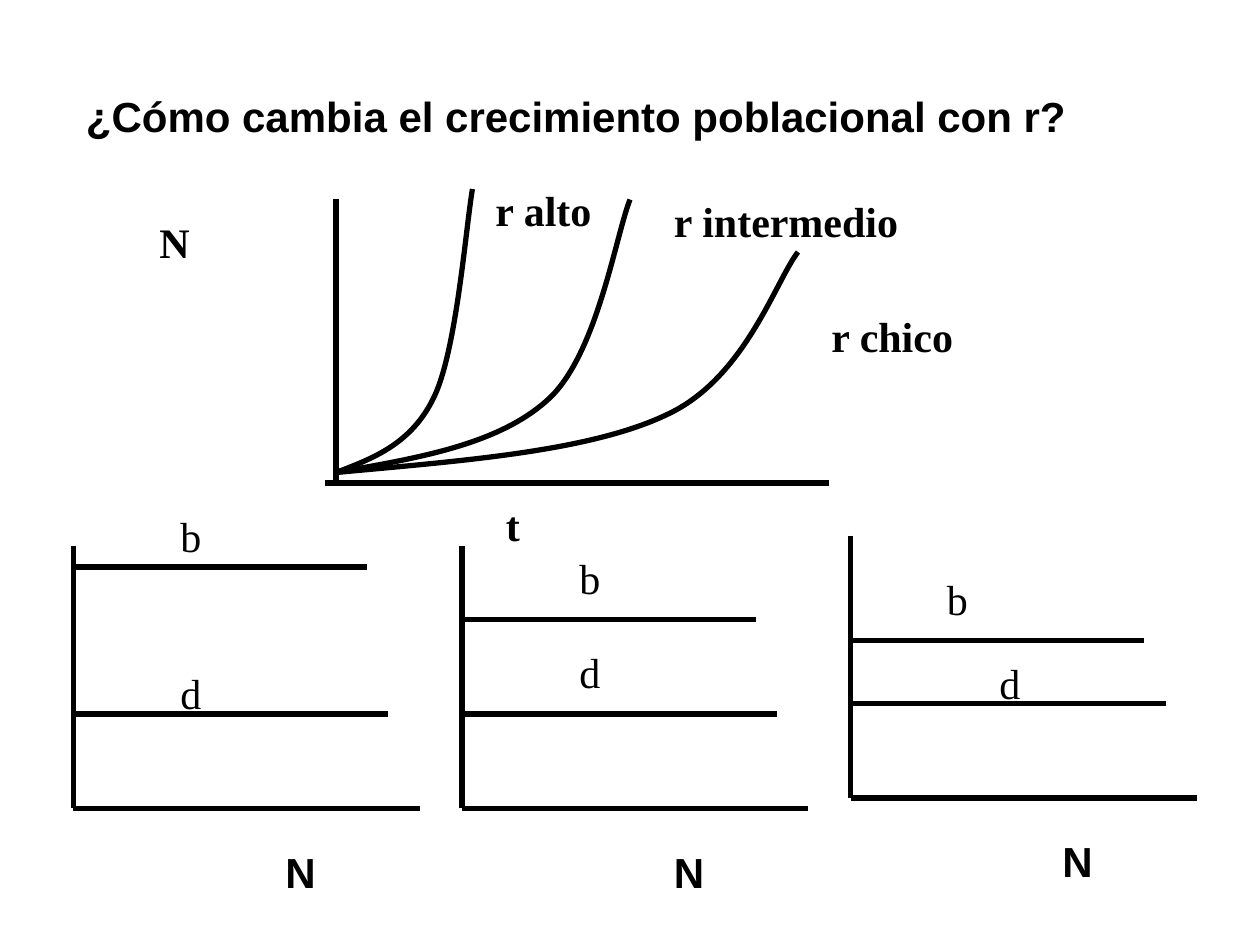
"""Build a slide on how population growth changes with r."""
from lxml.etree import SubElement
from pptx import Presentation
from pptx.dml.color import RGBColor
from pptx.enum.shapes import MSO_CONNECTOR as CONN
from pptx.enum.text import MSO_AUTO_SIZE as AUTO
from pptx.oxml.ns import qn
from pptx.util import Pt

PX = 9525
BLACK, WHITE = "000000", "FFFFFF"
SERIF, SANS = "Times New Roman", "Arial"
ORIGIN = (256, 360)
CURVES = [
    [(318, 349), (380, 339), (418, 304), (455, 270), (469, 180), (480, 152)],
    [(285, 349), (314, 338), (331, 302), (348, 266), (355, 173), (360, 144)],
    [(353, 351), (451, 344), (510, 315), (568, 287), (591, 214), (608, 192)],
]
CURVE_LABELS = [
    ("t", 376, 376, 88),
    ("r chico", 624, 232, 120),
    ("r intermedio", 504, 144, 224),
    ("r alto", 368, 136, 120),
    ("N", 112, 160, 112),
]
PANELS = [
    (56, 416, 432, (128, 384), (128, 504)),
    (352, 416, 472, (432, 416), (432, 488)),
    (648, 408, 488, (712, 432), (752, 496)),
]


def color(value):
    return RGBColor.from_string(value)


def add_line(shapes, x1, y1, x2, y2):
    line = shapes.add_connector(CONN.STRAIGHT, *(v * PX for v in (x1, y1, x2, y2)))
    line.line.color.rgb = color(BLACK)
    line.line.width = Pt(3)
    SubElement(line._element.spPr, qn("a:effectLst"))


def add_text(shapes, text, x, y, w, font=SERIF, bold=True, fill=None):
    box = shapes.add_textbox(x * PX, y * PX, w * PX, 48 * PX)
    if fill:
        box.fill.solid()
        box.fill.fore_color.rgb = color(fill)
    tf = box.text_frame
    tf.word_wrap = True
    tf.auto_size = AUTO.SHAPE_TO_FIT_TEXT
    p = tf.paragraphs[0]
    p.text = text
    p.font.name, p.font.size, p.font.bold = font, Pt(24), bold
    p.font.color.rgb = color(BLACK)


def add_curve(shapes, start, points):
    builder = shapes.build_freeform(*start, scale=PX)
    builder.add_line_segments(points[2::3], close=False)
    sp = builder.convert_to_shape()
    sp.shadow.inherit = False
    sp.fill.background()
    sp.line.color.rgb = color(BLACK)
    sp.line.width = Pt(3)
    left, top = start[0], points[-1][1]
    segments = list(sp._element.iter(qn("a:lnTo")))
    for i, segment in enumerate(segments):
        segment.tag = qn("a:cubicBezTo")
        segment.remove(segment[0])
        for x, y in points[3 * i:3 * i + 3]:
            SubElement(segment, qn("a:pt"), x=str(x - left), y=str(y - top))


def add_panel(shapes, x, top, b_y):
    base = top + 200
    add_line(shapes, x, top, x, base)
    for y, length in ((base, 264), (base - 72, 240), (b_y, 224)):
        add_line(shapes, x, y, x + length, y)
    add_text(shapes, "N", x + 152, base + 24, 64, SANS)


def main():
    prs = Presentation()
    prs.slide_width, prs.slide_height = 960 * PX, 720 * PX
    s = prs.slides.add_slide(prs.slide_layouts[6])
    shapes = s.shapes
    add_text(shapes, "¿Cómo cambia el crecimiento poblacional con r?",
             56, 64, 792, SANS, fill=WHITE)
    add_line(shapes, 256, 152, 256, 368)
    add_line(shapes, 248, 368, 632, 368)
    for points in CURVES:
        add_curve(shapes, ORIGIN, points)
    for label in CURVE_LABELS:
        add_text(shapes, *label)
    for x, top, b_y, b_at, d_at in PANELS:
        add_panel(shapes.add_group_shape().shapes, x, top, b_y)
        add_text(shapes, "b", *b_at, 56, bold=False)
        add_text(shapes, "d", *d_at, 56, bold=False)
    prs.save("out.pptx")


if __name__ == "__main__":
    main()
